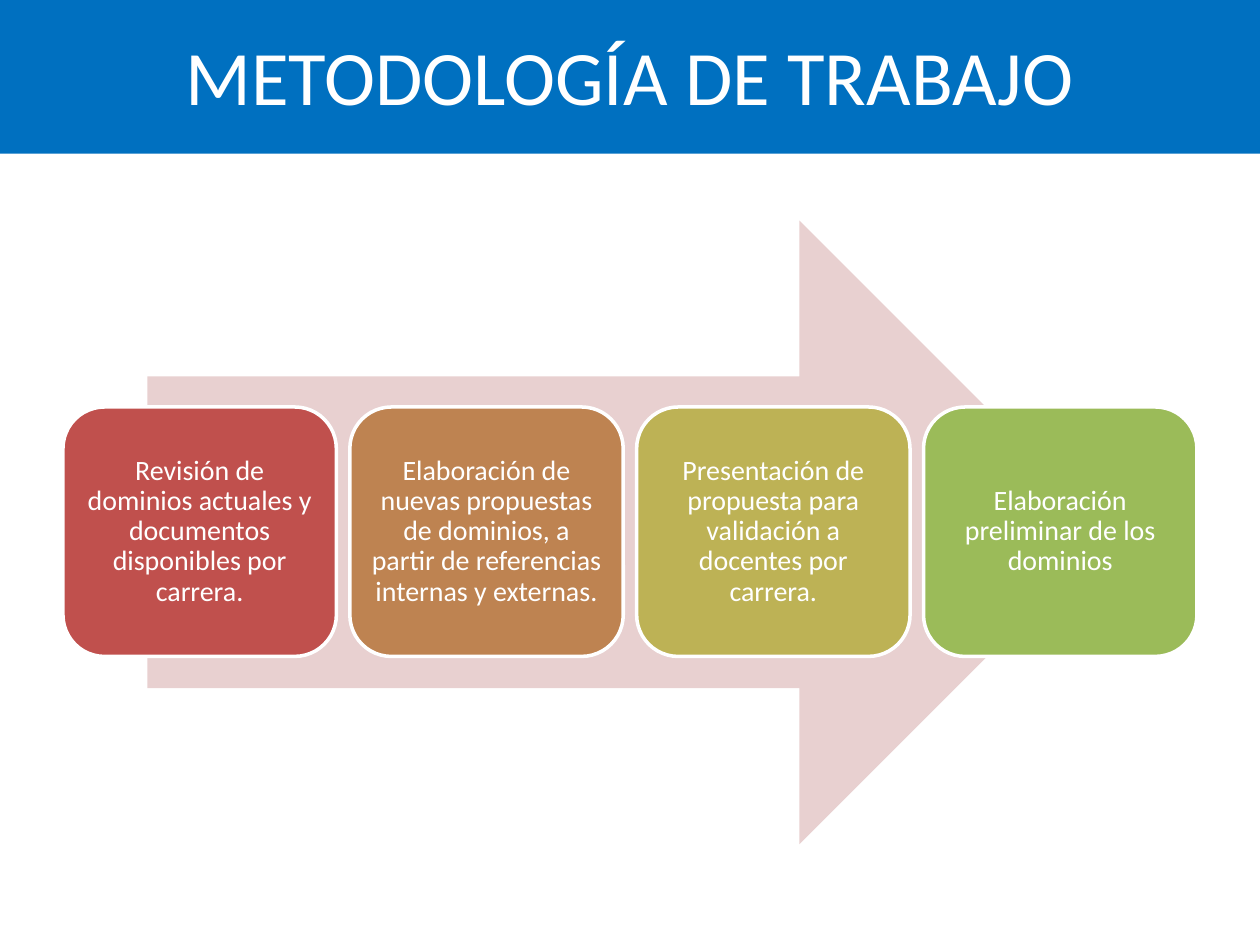
from dataclasses import dataclass

from pptx import Presentation
from pptx.dml.color import RGBColor as RGB
from pptx.enum.shapes import MSO_SHAPE as SHAPE
from pptx.enum.text import MSO_ANCHOR as ANCHOR, PP_ALIGN as ALIGN
from pptx.util import Inches, Pt


@dataclass(frozen=True)
class Theme:
    font: str = "Calibri"
    title_size: int = 44
    step_size: int = 16
    white: str = "FFFFFF"
    banner: str = "0070C0"
    arrow: str = "E8D0D0"
    steps: tuple = ("C0504D", "BE8351", "BDB255", "9BBB59")


theme = Theme()


def paint(shape, color):
    shape.fill.solid()
    shape.fill.fore_color.rgb = RGB.from_string(color)


def write(shape, text, size):
    tf = shape.text_frame
    tf.text = text
    tf.word_wrap = True
    tf.vertical_anchor = ANCHOR.MIDDLE
    p = tf.paragraphs[0]
    p.alignment = ALIGN.CENTER
    font = p.runs[0].font
    font.name = theme.font
    font.size = Pt(size)
    font.color.rgb = RGB.from_string(theme.white)
    return tf


prs = Presentation()
prs.slide_width = Inches(10)
prs.slide_height = Inches(7.5)
s = prs.slides.add_slide(prs.slide_layouts[5])

title = s.shapes.title
title.left, title.top = Inches(0), Inches(-0.03)
title.width, title.height = Inches(10), Inches(1.25)
paint(title, theme.banner)
write(title, "METODOLOGÍA DE TRABAJO", theme.title_size)

process = s.shapes.add_group_shape()
arrow = process.shapes.add_shape(
    SHAPE.RIGHT_ARROW, Inches(1.17), Inches(1.75), Inches(7.65), Inches(4.95))
arrow.shadow.inherit = False
paint(arrow, theme.arrow)
arrow.line.fill.background()

steps = [
    "Revisión de dominios actuales y documentos disponibles por carrera.",
    "Elaboración de nuevas propuestas de dominios, a partir de referencias internas y externas.",
    "Presentación de propuesta para validación a docentes por carrera.",
    "Elaboración preliminar de los dominios",
]
left, right, card_width = 0.5, 9.5, 2.17
pitch = (right - left - card_width) / (len(steps) - 1)

for i, (text, color) in enumerate(zip(steps, theme.steps)):
    card = process.shapes.add_shape(
        SHAPE.ROUNDED_RECTANGLE, Inches(left + i * pitch), Inches(3.23),
        Inches(card_width), Inches(1.98))
    card.shadow.inherit = False
    paint(card, color)
    card.line.color.rgb = RGB.from_string(theme.white)
    card.line.width = Pt(2)
    tf = write(card, text, theme.step_size)
    tf.margin_left = tf.margin_right = Inches(0.07)
    tf.margin_top = tf.margin_bottom = Inches(0.07)
    tf.paragraphs[0].line_spacing = 0.9

prs.save("out.pptx")
